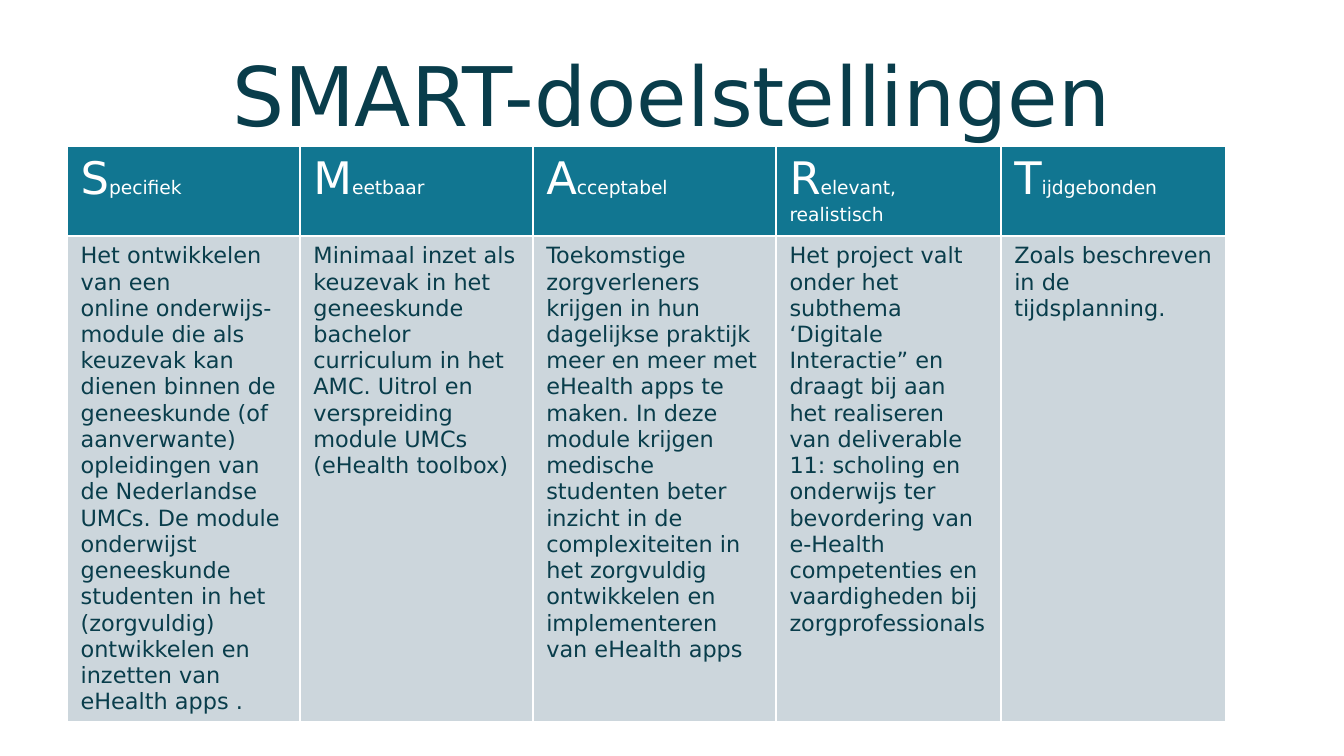
from lxml.etree import SubElement
from pptx import Presentation
from pptx.dml.color import RGBColor
from pptx.enum.text import MSO_ANCHOR, MSO_AUTO_SIZE, PP_ALIGN
from pptx.oxml.ns import qn
from pptx.util import Emu, Pt

FONT = "DejaVu Sans"
INK, WHITE, TEAL, GREY = "093D4B", "FFFFFF", "117691", "CCD6DC"
HARD_SPACE = chr(160)
COLUMN_WIDTHS = [693, 693, 724, 669, 669]
ROW_HEIGHTS = [269, 516]
GOALS = [
    ("S", "pecifiek",
     f"Het ontwikkelen van een online{HARD_SPACE}onderwijs-module die als keuzevak kan "
     "dienen binnen de geneeskunde (of aanverwante) opleidingen van de Nederlandse "
     "UMCs. De module onderwijst geneeskunde studenten in het (zorgvuldig) "
     "ontwikkelen en inzetten van eHealth apps ."),
    ("M", "eetbaar",
     "Minimaal inzet als keuzevak in het geneeskunde bachelor curriculum in het AMC. "
     "Uitrol en verspreiding module UMCs (eHealth toolbox)"),
    ("A", "cceptabel",
     "Toekomstige zorgverleners krijgen in hun dagelijkse praktijk meer en meer met "
     "eHealth apps te maken. In deze module krijgen medische studenten beter inzicht "
     "in de complexiteiten in het zorgvuldig ontwikkelen en implementeren van "
     "eHealth apps"),
    ("R", "elevant, realistisch",
     "Het project valt onder het subthema ‘Digitale Interactie” en draagt bij aan "
     "het realiseren van deliverable 11: scholing en onderwijs ter bevordering van "
     "e-Health competenties en vaardigheden bij zorgprofessionals"),
    ("T", "ijdgebonden", "Zoals beschreven in de tijdsplanning."),
]


def px(length):
    return Emu(length * 2286)


def color(value):
    return RGBColor.from_string(value)


def add_span(para, text, size, ink):
    span = para.add_run()
    span.text = text
    span.font.name = FONT
    span.font.size = Pt(size)
    span.font.bold = False
    span.font.color.rgb = color(ink)


def set_borders(cell):
    properties = cell._tc.get_or_add_tcPr()
    for index, side in enumerate(["a:lnL", "a:lnR", "a:lnT", "a:lnB"]):
        line = SubElement(properties, qn(side), w=str(Pt(1)))
        fill = SubElement(line, qn("a:solidFill"))
        SubElement(fill, qn("a:srgbClr"), val=WHITE)
        properties.insert(index, line)


def fill_cell(cell, background, ink, spans):
    cell.fill.solid()
    cell.fill.fore_color.rgb = color(background)
    set_borders(cell)
    para = cell.text_frame.paragraphs[0]
    for text, size in spans:
        add_span(para, text, size, ink)


def place_title(page, left, top, width, height):
    title = page.shapes.title
    title.left, title.top = px(left), px(top)
    title.width, title.height = px(width), px(height)
    frame = title.text_frame
    frame.auto_size = MSO_AUTO_SIZE.NONE
    frame.word_wrap = True
    frame.vertical_anchor = MSO_ANCHOR.MIDDLE
    para = frame.paragraphs[0]
    para.alignment = PP_ALIGN.CENTER
    add_span(para, "SMART-doelstellingen", 44, INK)


def place_goals(page, left, top, width, height):
    box = page.shapes.add_table(len(ROW_HEIGHTS), len(GOALS),
                                px(left), px(top), px(width), px(height))
    table = box.table
    for row, row_height in zip(table.rows, ROW_HEIGHTS):
        row.height = px(row_height)
    for index, (letter, rest, text) in enumerate(GOALS):
        table.columns[index].width = px(COLUMN_WIDTHS[index])
        fill_cell(table.cell(0, index), TEAL, WHITE, [(letter, 24), (rest, 10)])
        fill_cell(table.cell(1, index), GREY, INK, [(text, 12)])
    box.height = px(height)


def main():
    deck = Presentation()
    deck.slide_width, deck.slide_height = px(4000), px(2250)
    page = deck.slides.add_slide(deck.slide_layouts[5])
    place_title(page, 200, 90, 3600, 375)
    place_goals(page, 200, 434, sum(COLUMN_WIDTHS), 1748)
    deck.save("out.pptx")


if __name__ == "__main__":
    main()
